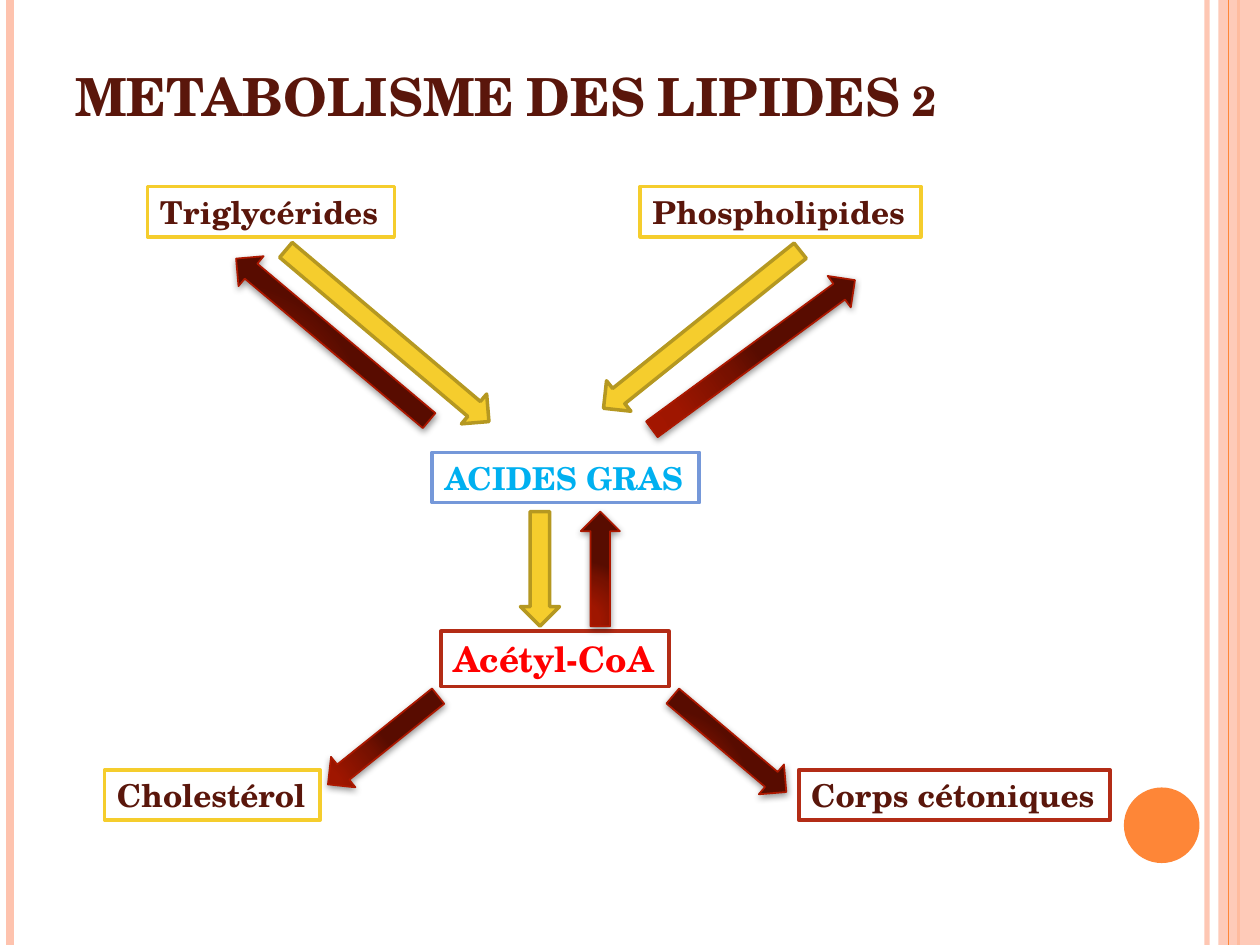
from lxml import etree
from pptx import Presentation
from pptx import util as u
from pptx.dml.color import RGBColor
from pptx.enum import shapes, text
from pptx.oxml import parse_xml
from pptx.oxml.ns import nsdecls, qn

FONT = "TeX Gyre Schola"
BROWN, YELLOW, RED = "5A160B", "F5CD2D", "B32C16"
ORANGE, SALMON = "FE8637", "FEC3AE"

DARK_GRADIENT = f"""
<a:gradFill {nsdecls('a')} rotWithShape="0"><a:gsLst>
  <a:gs pos="0"><a:srgbClr val="A41700"/></a:gs>
  <a:gs pos="30000"><a:srgbClr val="9F1600"/></a:gs>
  <a:gs pos="75000"><a:srgbClr val="771100"/></a:gs>
  <a:gs pos="100000"><a:srgbClr val="580C00"/></a:gs>
</a:gsLst><a:path path="circle">
  <a:fillToRect l="5000" t="100000" r="120000" b="10000"/>
</a:path></a:gradFill>"""

SHADOW = f"""
<a:effectLst {nsdecls('a')}>
  <a:outerShdw blurRad="50800" dist="20320" dir="5400000" rotWithShape="0">
    <a:srgbClr val="000000"><a:alpha val="42000"/></a:srgbClr>
  </a:outerShdw>
</a:effectLst>"""


def color(value):
    return RGBColor.from_string(value)


def set_alpha(element, percent):
    """Make the first solid colour inside an element partly transparent."""
    rgb = next(element.iter(qn("a:srgbClr")))
    etree.SubElement(rgb, qn("a:alpha")).set("val", str(percent * 1000))


def style_shape(shape, fill, line=None, width=2):
    shape.shadow.inherit = False
    shape.fill.solid()
    shape.fill.fore_color.rgb = color(fill)
    if line:
        shape.line.color.rgb = color(line)
        shape.line.width = u.Pt(width)
    else:
        shape.line.fill.background()


def write(shape, words, size, font_color):
    frame = shape.text_frame
    frame.text = words
    paragraph = frame.paragraphs[0]
    paragraph.alignment = text.PP_ALIGN.LEFT
    font = paragraph.runs[0].font
    font.name, font.size, font.bold = FONT, u.Pt(size), True
    font.color.rgb = color(font_color)
    return frame


def add_shape(slide, kind, left, top, width, height):
    return slide.shapes.add_shape(
        kind, u.Inches(left), u.Inches(top), u.Inches(width), u.Inches(height))


def add_stripe(slide, x, line_color, width, alpha=None):
    stripe = slide.shapes.add_connector(
        shapes.MSO_CONNECTOR.STRAIGHT,
        u.Inches(x), 0, u.Inches(x), u.Inches(7.5))
    stripe.line.color.rgb = color(line_color)
    stripe.line.width = u.Pt(width)
    properties = stripe._element.spPr
    if alpha:
        set_alpha(properties, alpha)
    etree.SubElement(properties, qn("a:effectLst"))


def add_frame(slide):
    """Draw the side stripes and the orange disc."""
    add_stripe(slide, 9.58, SALMON, 3, 93)
    add_stripe(slide, 0.08, SALMON, 4.5)
    add_stripe(slide, 9.83, ORANGE, 1.5)
    band = add_shape(slide, shapes.MSO_SHAPE.RECTANGLE, 9.67, 0, 0.33, 7.5)
    style_shape(band, SALMON)
    set_alpha(band._element.spPr, 87)
    add_stripe(slide, 9.75, ORANGE, 0.75)
    disc = add_shape(slide, shapes.MSO_SHAPE.OVAL, 8.92, 6.25, 0.6, 0.6)
    style_shape(disc, ORANGE)


def add_title(slide, words):
    title = slide.shapes.add_textbox(
        u.Inches(0.5), u.Inches(0.3), u.Inches(8.17), u.Inches(1.25))
    frame = write(title, words, 30, BROWN)
    frame.word_wrap = True
    frame.vertical_anchor = text.MSO_ANCHOR.BOTTOM
    frame.margin_bottom = u.Inches(0.54)
    frame.paragraphs[0].runs[0].font._element.set("cap", "small")


def add_label(slide, words, left, top, width, line, font_color=BROWN,
              size=18, height=0.4):
    label = add_shape(slide, shapes.MSO_SHAPE.RECTANGLE,
                      left, top, width, height)
    style_shape(label, "FFFFFF", line)
    frame = write(label, words, size, font_color)
    frame.word_wrap = False
    frame.auto_size = text.MSO_AUTO_SIZE.SHAPE_TO_FIT_TEXT


def add_arrow(slide, left, top, length, rotation):
    arrow = add_shape(slide, shapes.MSO_SHAPE.RIGHT_ARROW,
                      left, top, length, 0.31)
    arrow.rotation = rotation
    style_shape(arrow, YELLOW, "B59821")
    return arrow


def add_dark_arrow(slide, left, top, length, rotation):
    arrow = add_arrow(slide, left, top, length, rotation)
    style_shape(arrow, YELLOW, "AC1800", 1)
    properties = arrow._element.spPr
    for tag, xml in (("a:solidFill", DARK_GRADIENT), ("a:effectLst", SHADOW)):
        properties.replace(properties.find(qn(tag)), parse_xml(xml))


def main():
    presentation = Presentation()
    presentation.slide_width = u.Inches(10)
    presentation.slide_height = u.Inches(7.5)
    slide = presentation.slides.add_slide(presentation.slide_layouts[6])

    add_frame(slide)
    add_title(slide, "METABOLISME DES LIPIDES 2")

    add_label(slide, "Phospholipides", 5.08, 1.48, 2.23, YELLOW)
    add_label(slide, "ACIDES GRAS", 3.43, 3.59, 2.12, "7598D9", "00B0F0")
    add_label(slide, "Acétyl-CoA", 3.5, 5.01, 1.81, RED, "FF0000", 20, 0.44)
    add_label(slide, "Corps cétoniques", 6.34, 6.11, 2.47, RED)
    add_label(slide, "Cholestérol", 0.83, 6.11, 1.71, YELLOW)
    add_label(slide, "Triglycérides", 1.17, 1.48, 1.96, YELLOW)

    for place in ((4.57, 2.46, 2, 141.3), (2.02, 2.51, 2.11, 40.2),
                  (3.83, 4.36, 0.91, 90)):
        add_arrow(slide, *place)
    for place in ((2.48, 5.72, 1.12, 141.3), (5.2, 5.75, 1.18, 40.2),
                  (4.31, 4.36, 0.91, 270), (4.98, 2.66, 2, 323.7),
                  (1.64, 2.54, 2, 220)):
        add_dark_arrow(slide, *place)

    presentation.save("out.pptx")


if __name__ == "__main__":
    main()
